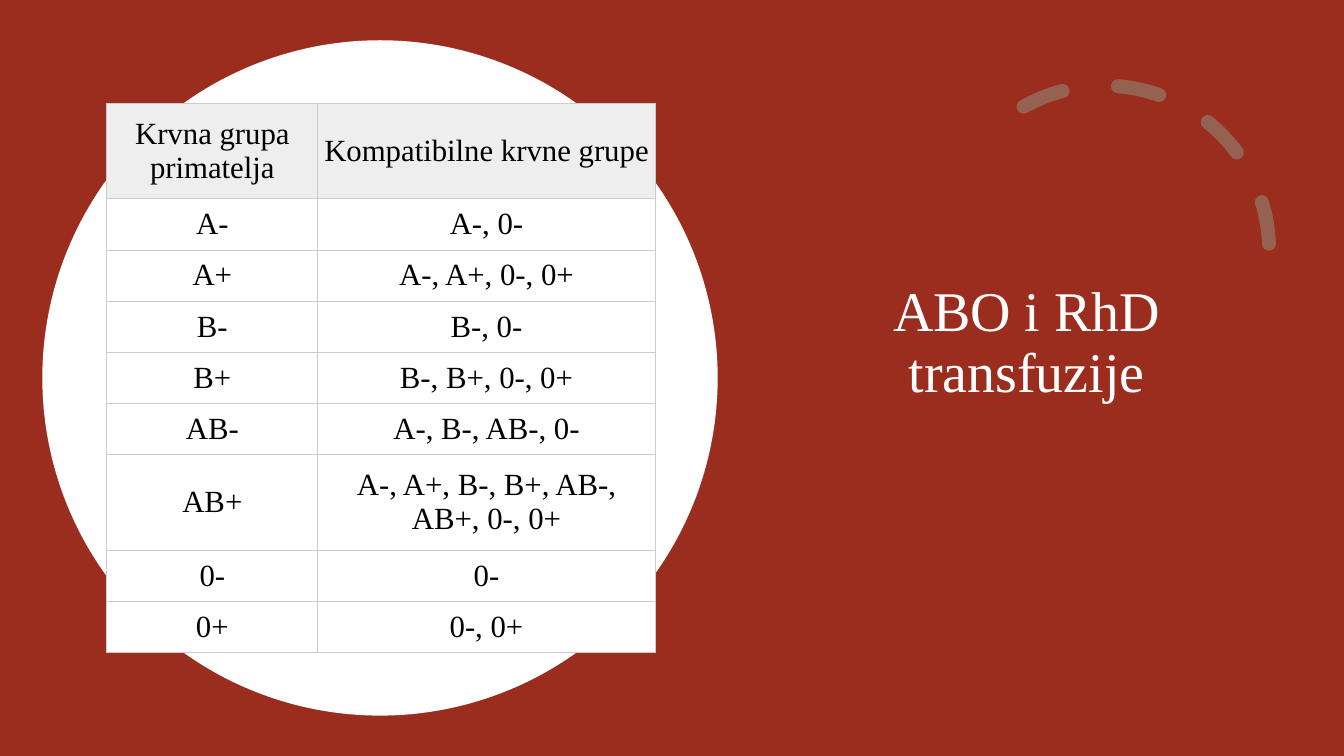
"""Build the slide on ABO and RhD transfusion compatibility."""
from dataclasses import dataclass

import pptx
import pptx.dml.color
import pptx.enum.dml
import pptx.enum.shapes
import pptx.enum.text
import pptx.oxml
import pptx.oxml.ns
import pptx.util
from pptx.shapes.autoshape import Shape
from pptx.slide import Slide
from pptx.table import _Cell

WIDTH = pptx.util.Inches(13.333)
HEIGHT = pptx.util.Inches(7.5)
FONT = "Times New Roman"
COLORS = {
    "red": "9B2D1F",
    "dash": "956251",
    "white": "FFFFFF",
    "black": "000000",
    "head": "EEEEEE",
    "rule": "CCCCCC",
}
KINDS = pptx.enum.shapes.MSO_SHAPE


@dataclass(frozen=True)
class Box:
    """Hold a frame in percent of the slide's width and height."""
    left: float
    top: float
    width: float
    height: float

    def frame(self) -> tuple[int, int, int, int]:
        """Return the frame in slide units."""
        return (across(self.left), down(self.top),
                across(self.width), down(self.height))


@dataclass(frozen=True)
class Match:
    """Pair a recipient with the donor groups that suit it."""
    group: str
    donors: str
    tall: bool = False


PAGE = Box(0, 0, 100, 100)
ARC = Box(69.9, 11.33, 24.53, 43.6)
TITLE = Box(58.05, 9.47, 36.68, 44.67)
DISC = Box(3.15, 5.33, 50.25, 89.33)
TABLE = Box(7.95, 13.64, 40.8, 72.7)
SPLIT = (15.7, 25.1)
TALL = 12.67
ROWS = (
    Match("Krvna grupa primatelja", "Kompatibilne krvne grupe", True),
    Match("A-", "A-, 0-"),
    Match("A+", "A-, A+, 0-, 0+"),
    Match("B-", "B-, 0-"),
    Match("B+", "B-, B+, 0-, 0+"),
    Match("AB-", "A-, B-, AB-, 0-"),
    Match("AB+", "A-, A+, B-, B+, AB-, AB+, 0-, 0+", True),
    Match("0-", "0-"),
    Match("0+", "0-, 0+"),
)


def across(share: float) -> int:
    """Turn a percentage of the width into a length."""
    return round(WIDTH * share / 100)


def down(share: float) -> int:
    """Turn a percentage of the height into a length."""
    return round(HEIGHT * share / 100)


def color(name: str) -> pptx.dml.color.RGBColor:
    """Look up a named colour."""
    return pptx.dml.color.RGBColor.from_string(COLORS[name])


def write(frame: pptx.text.text.TextFrame, text: str, size: int,
          ink: str, space: float = 1.0) -> None:
    """Write one centred run."""
    para = frame.paragraphs[0]
    para.alignment = pptx.enum.text.PP_ALIGN.CENTER
    para.line_spacing = space
    run = para.add_run()
    run.text = text
    run.font.name = FONT
    run.font.size = pptx.util.Pt(size)
    run.font.color.rgb = color(ink)


def solid(slide: Slide, kind: KINDS, box: Box, fill: str) -> Shape:
    """Draw a filled shape without an outline."""
    shape = slide.shapes.add_shape(kind, *box.frame())
    shape.shadow.inherit = False
    shape.fill.solid()
    shape.fill.fore_color.rgb = color(fill)
    shape.line.fill.background()
    return shape


def curve(slide: Slide) -> None:
    """Draw the dashed arc with round caps."""
    arc = solid(slide, KINDS.ARC, ARC, "red")
    arc.fill.background()
    arc.adjustments[0] = 144.42
    arc.adjustments[1] = 0
    arc.line.color.rgb = color("dash")
    arc.line.width = pptx.util.Pt(10)
    arc.line.dash_style = pptx.enum.dml.MSO_LINE.DASH
    arc.element.spPr.find(pptx.oxml.ns.qn("a:ln")).set("cap", "rnd")


def title(slide: Slide) -> None:
    """Place the slide's title."""
    frame = slide.shapes.add_textbox(*TITLE.frame()).text_frame
    frame.word_wrap = True
    frame.vertical_anchor = pptx.enum.text.MSO_ANCHOR.BOTTOM
    write(frame, "ABO i RhD transfuzije", 40, "white", 0.9)


def border(cell: _Cell) -> None:
    """Rule all four sides of a cell."""
    props = cell._tc.get_or_add_tcPr()
    for side in "LRTB":
        props.append(pptx.oxml.parse_xml(
            f'<a:ln{side} {pptx.oxml.ns.nsdecls("a")} w="{pptx.util.Pt(0.75)}">'
            f'<a:solidFill><a:srgbClr val="{COLORS["rule"]}"/></a:solidFill>'
            f'</a:ln{side}>'))


def style(cell: _Cell, text: str, fill: str) -> None:
    """Fill, rule and label a cell."""
    border(cell)
    cell.fill.solid()
    cell.fill.fore_color.rgb = color(fill)
    cell.vertical_anchor = pptx.enum.text.MSO_ANCHOR.MIDDLE
    cell.margin_left = cell.margin_right = pptx.util.Inches(0.05)
    cell.margin_top = cell.margin_bottom = pptx.util.Inches(0.01)
    write(cell.text_frame, text, 22, "black")


def chart(slide: Slide) -> None:
    """Lay out the table of matching groups."""
    table = slide.shapes.add_table(len(ROWS), len(SPLIT), *TABLE.frame()).table
    table.first_row = table.horz_banding = False
    for col, share in zip(table.columns, SPLIT):
        col.width = across(share)
    count = sum(match.tall for match in ROWS)
    short = (TABLE.height - count * TALL) / (len(ROWS) - count)
    for index, match in enumerate(ROWS):
        table.rows[index].height = down(TALL if match.tall else short)
        for place, text in enumerate((match.group, match.donors)):
            style(table.cell(index, place), text, "white" if index else "head")


def main() -> None:
    """Build and save the deck."""
    deck = pptx.Presentation()
    deck.slide_width, deck.slide_height = WIDTH, HEIGHT
    slide = deck.slides.add_slide(deck.slide_layouts[6])
    solid(slide, KINDS.RECTANGLE, PAGE, "red")
    curve(slide)
    title(slide)
    solid(slide, KINDS.OVAL, DISC, "white")
    chart(slide)
    deck.save("out.pptx")


if __name__ == "__main__":
    main()
